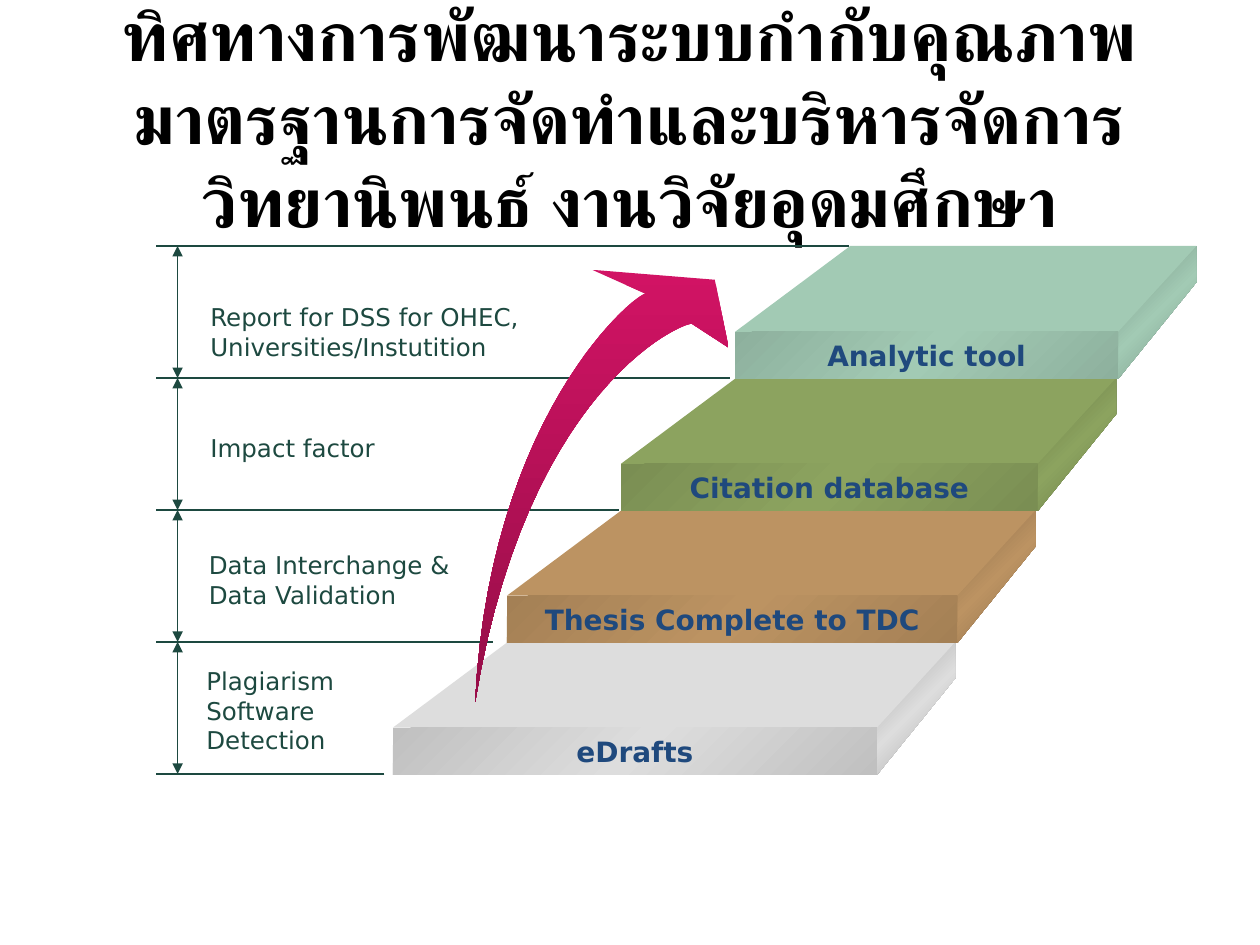
from copy import deepcopy

from lxml.etree import SubElement
from pptx import Presentation
from pptx.dml.color import RGBColor
from pptx.enum.lang import MSO_LANGUAGE_ID as Language
from pptx.enum.shapes import MSO_CONNECTOR as Connector, MSO_SHAPE as Shape
from pptx.enum.text import MSO_ANCHOR as Anchor, MSO_AUTO_SIZE as AutoSize, PP_ALIGN as Align
from pptx.oxml.ns import qn
from pptx.util import Cm, Pt

COLORS = {
    "title": "000000", "label": "1D4940", "step_text": "1F497D",
    "arrow_top": "D11364", "arrow_bottom": "960E48",
    "grey": "DDDDDD", "grey_front": "C0C0C0", "grey_side": "9E9E9E",
    "brown": "BC9362", "brown_front": "A48055", "brown_side": "866946",
    "green": "8CA35F", "green_front": "7A8E53", "green_side": "647544",
    "teal": "A2CAB4", "teal_front": "8DB09D", "teal_side": "749081",
}
TITLE = ("ทิศทางการพัฒนาระบบกำกับคุณภาพมาตรฐานการจัดทำและบริหารจัดการ"
         "วิทยานิพนธ์ งานวิจัยอุดมศึกษา")

# From the lowest step upwards: name, hue
STEPS = [
    ("eDrafts", "grey"),
    ("Thesis Complete to TDC", "brown"),
    ("Citation database", "green"),
    ("Analytic tool", "teal"),
]
# From the lowest level upwards: lines, box (left, top, width, height) in cm
LABELS = [
    (["Plagiarism", "Software", "Detection"], (3.91, 13.31, 3.10, 2.36)),
    (["Data Interchange &", "Data Validation"], (3.96, 10.97, 5.44, 1.45)),
    (["Impact factor"], (3.99, 8.61, 3.89, 0.86)),
    (["Report for DSS for OHEC,", "Universities/Instutition"], (3.99, 5.97, 6.93, 1.45)),
]
GUIDE_ENDS = [7.75, 9.93, 12.47, 14.71, 17.12]
RISE = 2.66  # from one level to the next, cm


def color(name):
    return RGBColor.from_string(COLORS[name])


def add_run(paragraph, text, size, color_name, font="DejaVu Sans", bold=False):
    run = paragraph.add_run()
    run.text = text
    run.font.name = font
    run.font.size = Pt(size)
    run.font.bold = bold
    run.font.color.rgb = color(color_name)
    return run


def paint(shape, *hues, angle=45):
    """Fill with one colour, or with an even gradient at a clockwise angle."""
    shape.shadow.inherit = False
    shape.line.fill.background()
    if len(hues) == 1:
        shape.fill.solid()
        shape.fill.fore_color.rgb = color(hues[0])
        return
    shape.fill.gradient()
    shape.fill.gradient_angle = 360 - angle
    stop_list = shape._element.spPr.find(qn("a:gradFill")).find(qn("a:gsLst"))
    for _ in hues[2:]:
        stop_list.append(deepcopy(stop_list[-1]))
    for index, (stop, hue) in enumerate(zip(shape.fill.gradient_stops, hues)):
        stop.color.rgb = color(hue)
        stop.position = index / (len(hues) - 1)


def add_outline(slide, points):
    corners = [(Cm(x), Cm(y)) for x, y in points]
    builder = slide.shapes.build_freeform(*corners[0])
    builder.add_line_segments(corners[1:], close=True)
    return builder.convert_to_shape()


def add_rule(slide, start, end, arrowheads=False):
    rule = slide.shapes.add_connector(
        Connector.STRAIGHT, *(Cm(value) for value in (*start, *end)))
    rule.line.width = Pt(0.75)
    rule.line.color.rgb = color("label")
    properties = rule._element.spPr
    if arrowheads:
        for tag in ("a:headEnd", "a:tailEnd"):
            SubElement(properties.find(qn("a:ln")), qn(tag), type="triangle")
    SubElement(properties, qn("a:effectLst"))


def add_title(slide, box):
    title = slide.shapes.title
    title.left, title.top, title.width, title.height = (Cm(value) for value in box)
    frame = title.text_frame
    frame.auto_size = AutoSize.NONE
    frame.vertical_anchor = Anchor.MIDDLE
    frame.word_wrap = True
    heading = frame.paragraphs[0]
    heading.alignment = Align.CENTER
    run = add_run(heading, TITLE, 39.6, "title", font="Calibri", bold=True)
    run.font.language_id = Language.THAI


def add_scale(slide, left, bottom):
    """Level lines, joined by a column of double arrows."""
    levels = [bottom - RISE * index for index in range(len(GUIDE_ENDS))]
    for end, level in zip(GUIDE_ENDS, levels):
        add_rule(slide, (end, level), (left, level))
    axis = left + 0.43
    for lower, upper in zip(levels, levels[1:]):
        add_rule(slide, (axis, upper), (axis, lower), arrowheads=True)


def add_label(slide, lines, box):
    frame = slide.shapes.add_textbox(*(Cm(value) for value in box)).text_frame
    frame.word_wrap = False
    for index, line in enumerate(lines):
        paragraph = frame.add_paragraph() if index else frame.paragraphs[0]
        add_run(paragraph, line, 14, "label")


def add_step(slide, name, hue, box):
    """A slab whose front face fills the box."""
    left, top, width, height = box
    right, back = left + width, top - 1.73
    back_left, back_right = left + 2.32, right + 1.58

    side = add_outline(slide, [(back_right, back + 0.73), (right, top + height),
                               (right, top), (back_right, back)])
    paint(side, hue + "_side", hue, hue + "_side")
    tread = add_outline(slide, [(right, top), (left, top),
                                (back_left, back), (back_right, back)])
    paint(tread, hue)

    front = slide.shapes.add_shape(Shape.RECTANGLE, *(Cm(value) for value in box))
    paint(front, hue + "_front", hue, hue + "_front")
    frame = front.text_frame
    frame.word_wrap = False
    frame.vertical_anchor = Anchor.MIDDLE
    caption = frame.paragraphs[0]
    caption.alignment = Align.CENTER
    add_run(caption, name, 16, "step_text", bold=True)


def add_staircase(slide, left, top, width):
    """Steps going up from the lowest front face, each narrower than the last."""
    for index, (name, hue) in enumerate(STEPS):
        add_step(slide, name, hue, (left + 2.3 * index, top - RISE * index,
                                    width - 0.68 * index, 0.95))


def curve(*controls, count=28):
    """Points along a cubic Bezier curve."""
    weights = [((1 - t) ** 3, 3 * t * (1 - t) ** 2, 3 * t ** 2 * (1 - t), t ** 3)
               for t in (step / count for step in range(count + 1))]
    return [tuple(sum(w * point[axis] for w, point in zip(row, controls))
                  for axis in (0, 1)) for row in weights]


def add_swoosh(slide, left, top):
    tail = (0, 8.71)
    outer = curve(tail, (0.28, 3.02), (3.12, 0.56), (3.43, 0.48))
    head = [(2.36, 0), (4.83, 0.2), (5.11, 1.57)]
    inner = curve((4.37, 1.09), (4.22, 1.04), (1.04, 2.34), tail)
    swoosh = add_outline(slide, [(left + x, top + y) for x, y in outer + head + inner])
    paint(swoosh, "arrow_top", "arrow_bottom", angle=90)


def main():
    deck = Presentation()
    deck.slide_width, deck.slide_height = Cm(25.4), Cm(19.05)
    slide = deck.slides.add_slide(deck.slide_layouts[5])
    add_title(slide, (1.27, 0.76, 22.86, 3.18))
    add_scale(slide, left=3.15, bottom=15.6)
    for lines, box in LABELS:
        add_label(slide, lines, box)
    add_staircase(slide, left=7.92, top=14.67, width=9.76)
    add_swoosh(slide, left=9.58, top=5.44)
    deck.save("out.pptx")


if __name__ == "__main__":
    main()
